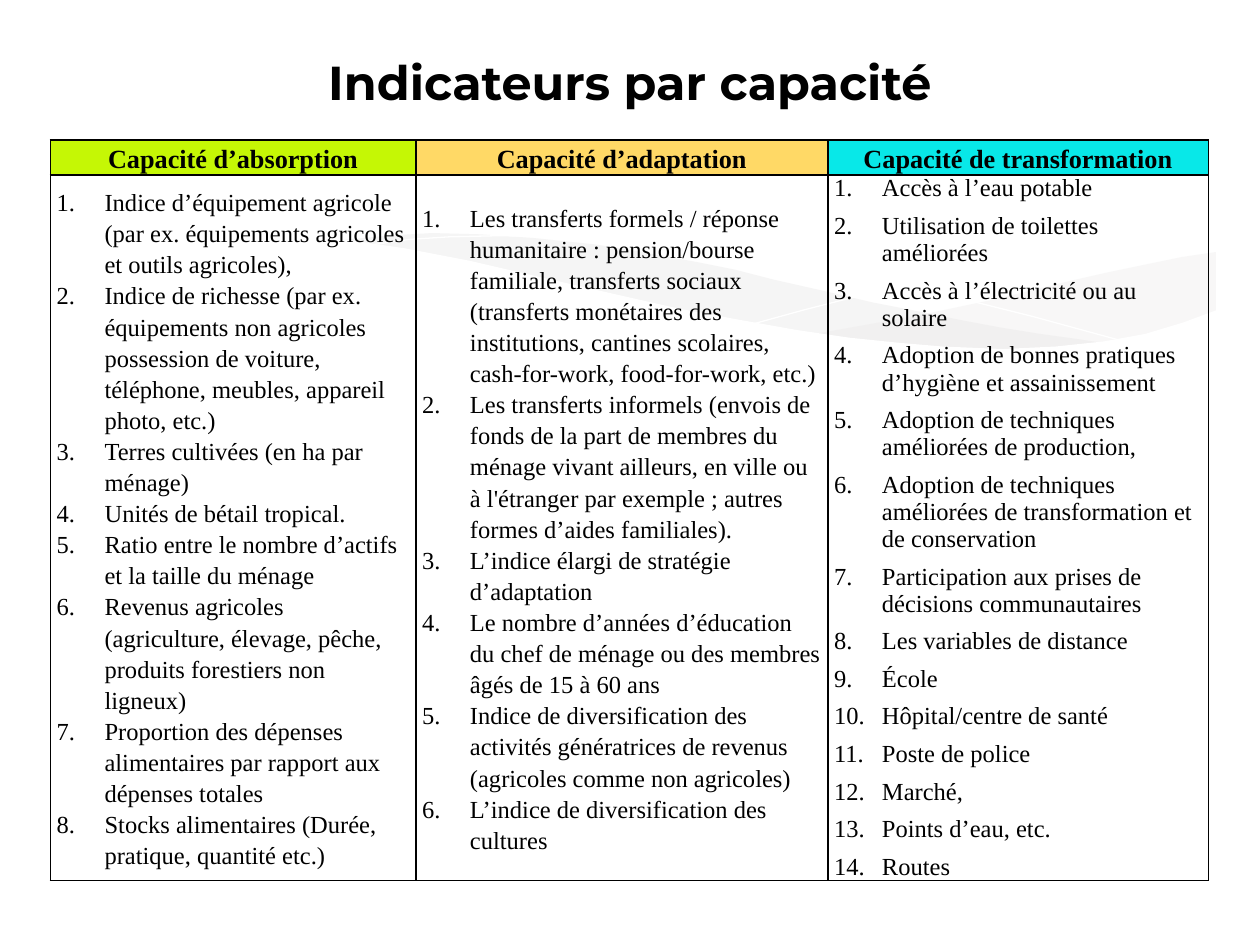
from lxml import etree
from pptx import Presentation
from pptx.dml.color import RGBColor
from pptx.enum.text import MSO_ANCHOR, PP_ALIGN
from pptx.oxml.ns import qn
from pptx.util import Inches, Pt

CENTER, LEFT = PP_ALIGN.CENTER, PP_ALIGN.LEFT
MIDDLE = MSO_ANCHOR.MIDDLE
COLORS = {"text": "000000", "paper": "FFFFFF", "wave": "E7E6E6",
          "absorption": "C5F705", "adaptation": "FFD966", "transformation": "08E8E8"}

CAPACITIES = [
    ("Capacité d’absorption", "absorption", 2.9, 1.15, 0, [
        "Indice d’équipement agricole (par ex. équipements agricoles et outils agricoles),",
        "Indice de richesse (par ex. équipements non agricoles possession de voiture, "
        "téléphone, meubles, appareil photo, etc.)",
        "Terres cultivées (en ha par ménage)",
        "Unités de bétail tropical.",
        "Ratio entre le nombre d’actifs et la taille du ménage",
        "Revenus agricoles (agriculture, élevage, pêche, produits forestiers non ligneux)",
        "Proportion des dépenses alimentaires par rapport aux dépenses totales",
        "Stocks alimentaires (Durée, pratique, quantité etc.)",
    ]),
    ("Capacité d’adaptation", "adaptation", 3.27, 1.15, 0, [
        "Les transferts formels / réponse humanitaire : pension/bourse familiale, "
        "transferts sociaux (transferts monétaires des institutions, cantines scolaires, "
        "cash-for-work, food-for-work, etc.)",
        "Les transferts informels (envois de fonds de la part de membres du ménage vivant "
        "ailleurs, en ville ou à l'étranger par exemple ; autres formes d’aides familiales).",
        "L’indice élargi de stratégie d’adaptation",
        "Le nombre d’années d’éducation du chef de ménage ou des membres âgés de 15 à 60 ans",
        "Indice de diversification des activités génératrices de revenus "
        "(agricoles comme non agricoles)",
        "L’indice de diversification des cultures",
    ]),
    ("Capacité de transformation", "transformation", 3.02, 1, 6, [
        "Accès à l’eau potable",
        "Utilisation de toilettes améliorées",
        "Accès à l’électricité ou au solaire",
        "Adoption de bonnes pratiques d’hygiène et assainissement",
        "Adoption de techniques améliorées de production,",
        "Adoption de techniques améliorées de transformation et de conservation",
        "Participation aux prises de décisions communautaires",
        "Les variables de distance",
        "École",
        "Hôpital/centre de santé",
        "Poste de police",
        "Marché,",
        "Points d’eau, etc.",
        "Routes",
    ]),
]

RIGHT_WAVE = [(965, 200), (938, 204), (909, 210), (880, 216), (849, 223), (792, 237),
              (740, 248), (692, 257), (647, 265), (677, 269), (705, 272), (731, 275),
              (768, 277), (801, 278), (832, 277), (860, 274), (886, 270), (910, 265),
              (932, 259), (952, 252), (965, 247)]
LONG_WAVE = [(881, 273), (854, 269), (825, 265), (794, 260), (762, 254), (728, 247),
             (692, 240), (654, 231), (614, 222), (583, 214), (553, 208), (525, 203),
             (498, 198), (472, 194), (424, 189), (381, 186), (343, 185), (309, 187),
             (267, 191), (304, 196), (344, 203), (386, 211), (432, 222), (474, 232),
             (513, 240), (550, 248), (586, 255), (619, 261), (651, 266), (680, 270),
             (709, 274), (735, 276), (772, 278), (805, 278), (836, 277), (864, 275)]
LONG_CURVE = [(290, 195), (325, 190), (356, 188), (398, 187), (433, 188), (472, 190),
              (516, 194), (566, 200), (621, 208), (681, 219), (747, 233), (819, 251),
              (896, 272)]
RIGHT_CURVE = [(598, 257), (638, 246), (681, 235), (734, 223), (793, 210), (854, 199),
               (899, 192), (940, 187), (965, 185)]
MASK = [(966, 246), (939, 256), (909, 265), (876, 271), (838, 275), (796, 277),
        (748, 275), (713, 272), (674, 268), (633, 262), (588, 254), (539, 245),
        (486, 233), (429, 220), (373, 207), (321, 197), (273, 190), (230, 186),
        (191, 184), (155, 184), (124, 185), (97, 187), (73, 191), (53, 195),
        (36, 199), (17, 205), (0, 213), (0, 329), (967, 329)]


class SlideBuilder:
    table_font = "Times New Roman"
    title_font = "Montserrat"
    indent = Inches(0.38)

    def __init__(self, page):
        self.page = page

    def color(self, name):
        return RGBColor.from_string(COLORS[name])

    def style(self, para, font_name, size, bold):
        for span in para.runs:
            span.font.name = font_name
            span.font.size = Pt(size)
            span.font.bold = bold
            span.font.color.rgb = self.color("text")

    def title(self, text, left, top, width, height):
        box = self.page.shapes.title
        box.left, box.top = Inches(left), Inches(top)
        box.width, box.height = Inches(width), Inches(height)
        frame = box.text_frame
        frame.text = text
        frame.word_wrap = True
        frame.vertical_anchor = MIDDLE
        frame.margin_left = frame.margin_right = 0
        frame.margin_top = frame.margin_bottom = 0
        para = frame.paragraphs[0]
        para.alignment = CENTER
        para.line_spacing = 0.7
        self.style(para, self.title_font, 27.2, True)

    def outline(self, points, fill=None, opacity=100):
        builder = self.page.shapes.build_freeform(*points[0], scale=Inches(0.01))
        builder.add_line_segments(points[1:], close=fill is not None)
        shape = builder.convert_to_shape()
        shape.shadow.inherit = False
        if fill is None:
            shape.fill.background()
            shape.line.color.rgb = self.color("paper")
            shape.line.width = 0
            return
        shape.line.fill.background()
        shape.fill.solid()
        shape.fill.fore_color.rgb = self.color(fill)
        if opacity < 100:
            tone = shape.fill._xPr.find(".//" + qn("a:srgbClr"))
            etree.SubElement(tone, qn("a:alpha"), val=str(opacity * 1000))

    def borders(self, cell):
        properties = cell._tc.get_or_add_tcPr()
        for position, side in enumerate(("lnL", "lnR", "lnT", "lnB")):
            line = etree.Element(qn("a:" + side), w=str(Pt(1)))
            fill = etree.SubElement(line, qn("a:solidFill"))
            etree.SubElement(fill, qn("a:srgbClr"), val=COLORS["text"])
            properties.insert(position, line)

    def number(self, para):
        properties = para._p.get_or_add_pPr()
        properties.set("marL", str(self.indent))
        properties.set("indent", str(-self.indent))
        etree.SubElement(properties, qn("a:buAutoNum"), type="arabicPeriod")

    def cell(self, cell, lines, size, spacing, after=0, fill=None):
        header = fill is not None
        cell.margin_left = cell.margin_right = Inches(0.05)
        cell.margin_top = cell.margin_bottom = 0
        cell.vertical_anchor = MIDDLE
        if header:
            cell.fill.solid()
            cell.fill.fore_color.rgb = self.color(fill)
        else:
            cell.fill.background()
        self.borders(cell)
        cell.text_frame.text = "\n".join(lines)
        for para in cell.text_frame.paragraphs:
            if not header:
                self.number(para)
            para.alignment = CENTER if header else LEFT
            para.line_spacing = spacing
            para.space_after = Pt(after)
            self.style(para, self.table_font, size, header)

    def table(self, capacities, left, top, heights):
        widths = [capacity[2] for capacity in capacities]
        table = self.page.shapes.add_table(
            len(heights), len(widths), Inches(left), Inches(top),
            Inches(sum(widths)), Inches(sum(heights))).table
        table.first_row = table.horz_banding = False
        for row, height in zip(table.rows, heights):
            row.height = Inches(height)
        for index, (heading, fill, width, spacing, after, items) in enumerate(capacities):
            table.columns[index].width = Inches(width)
            self.cell(table.cell(0, index), [heading], 15, 1.15, fill=fill)
            self.cell(table.cell(1, index), items, 14, spacing, after)


def main():
    deck = Presentation()
    deck.slide_width, deck.slide_height = Inches(10), Inches(7.5)
    slide = SlideBuilder(deck.slides.add_slide(deck.slide_layouts[5]))
    slide.outline(RIGHT_WAVE, "wave", 29)
    slide.outline(LONG_WAVE, "wave", 40)
    slide.outline(LONG_CURVE)
    slide.outline(RIGHT_CURVE)
    slide.outline(MASK, "paper")
    slide.table(CAPACITIES, 0.4, 1.11, [0.28, 5.52])
    slide.title("Indicateurs par capacité", 0.94, 0.47, 8.12, 0.46)
    deck.save("out.pptx")


if __name__ == "__main__":
    main()
